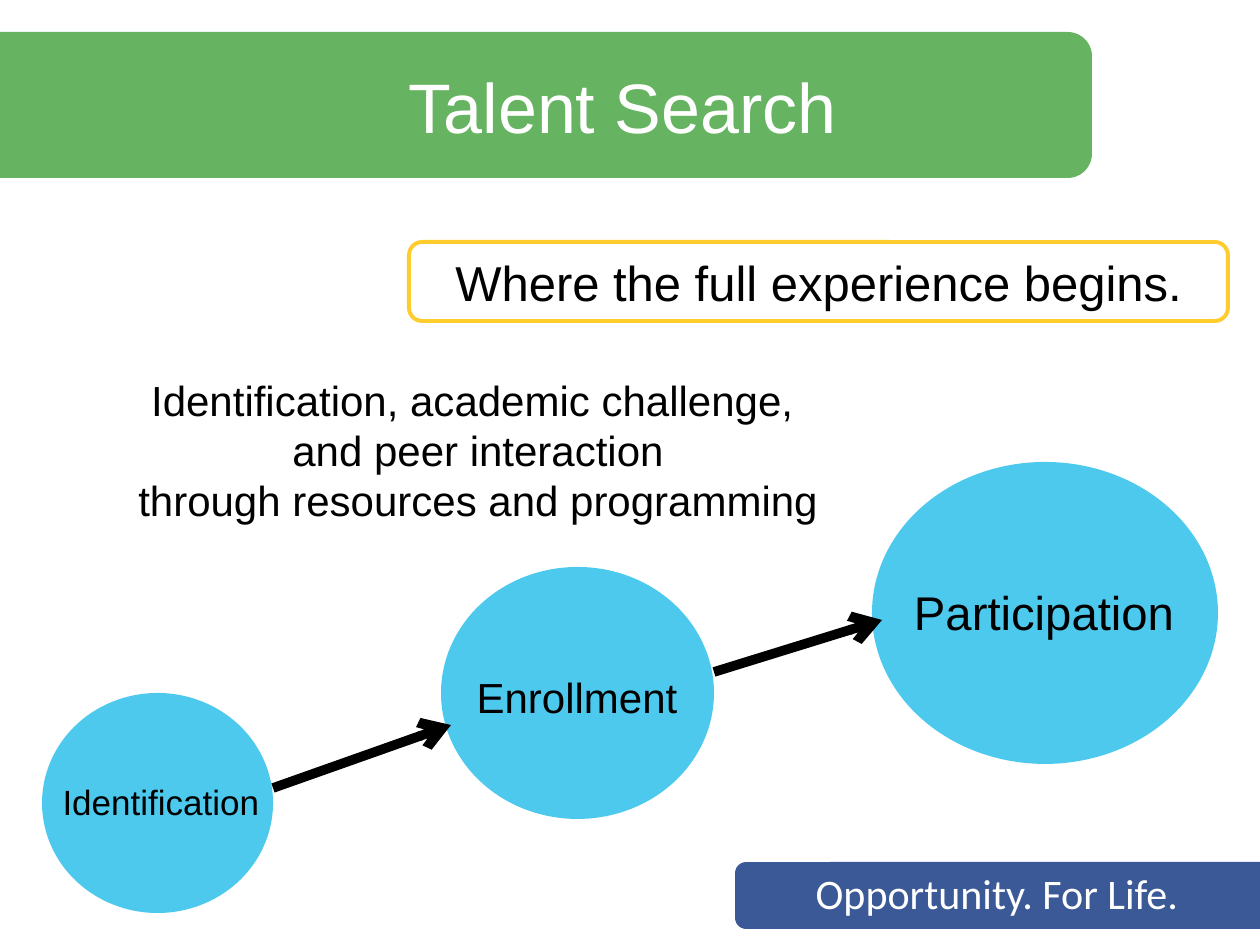
from dataclasses import dataclass

from lxml.etree import SubElement
from pptx import Presentation
from pptx.dml.color import RGBColor
from pptx.enum.shapes import MSO_CONNECTOR, MSO_SHAPE
from pptx.enum.text import MSO_ANCHOR, MSO_AUTO_SIZE, PP_ALIGN
from pptx.oxml.ns import qn
from pptx.util import Emu, Pt

EMU_PER_PX = 914400 / 126


def px(length):
    return Emu(round(length * EMU_PER_PX))


@dataclass(frozen=True)
class Theme:
    green: str = "66B361"
    navy: str = "3B5996"
    sky: str = "4DC9EE"
    yellow: str = "FFCC2E"
    white: str = "FFFFFF"
    black: str = "000000"
    font: str = "Arial"
    slogan_font: str = "Calibri"
    title: int = 40
    tagline: int = 28
    large: int = 27
    body: int = 24
    small: int = 20


def write_text(frame, text, *, size, color, font, anchor=MSO_ANCHOR.TOP, wrap=True):
    """Fill a frame with centred text: \\n parts paragraphs, \\v breaks a line."""
    frame.word_wrap = wrap
    frame.auto_size = MSO_AUTO_SIZE.NONE
    frame.vertical_anchor = anchor
    frame.text = text
    for paragraph in frame.paragraphs:
        paragraph.alignment = PP_ALIGN.CENTER
        paragraph.space_before = Pt(0)
        for run in paragraph.runs:
            run.font.size = Pt(size)
            run.font.name = font
            run.font.color.rgb = RGBColor.from_string(color)


class SlideBuilder:
    def __init__(self, slide, theme):
        self.slide = slide
        self.shapes = slide.shapes
        self.theme = theme

    def shape(self, kind, left, top, width, height, fill=None, line=None):
        shape = self.shapes.add_shape(kind, px(left), px(top), px(width), px(height))
        shape.shadow.inherit = False
        if fill:
            shape.fill.solid()
            shape.fill.fore_color.rgb = RGBColor.from_string(fill)
        else:
            shape.fill.background()
        if line:
            shape.line.color.rgb = RGBColor.from_string(line)
            shape.line.width = Pt(2.25)
        else:
            shape.line.fill.background()
        return shape

    def band(self, left, top, width, height, fill, rotation):
        """Draw an edge band: an upright tab turned on its side about its centre."""
        shift = (width - height) / 2
        shape = self.shape(MSO_SHAPE.ROUND_2_SAME_RECTANGLE, left + shift, top - shift,
                           height, width, fill)
        shape.rotation = rotation

    def text(self, text, left, top, width, height, size, color=None, font=None, **options):
        box = self.shapes.add_textbox(px(left), px(top), px(width), px(height))
        write_text(box.text_frame, text, size=size, color=color or self.theme.black,
                   font=font or self.theme.font, **options)

    def title(self, text, left, top, width, height):
        title = self.shapes.title
        title.left, title.top, title.width, title.height = map(px, (left, top, width, height))
        write_text(title.text_frame, text, size=self.theme.title,
                   color=self.theme.white, font=self.theme.font)
        # Bring the title in front of its band
        self.shapes._spTree.append(title._element)

    def framed_text(self, text, left, top, width, height):
        shape = self.shape(MSO_SHAPE.ROUNDED_RECTANGLE, left, top, width, height,
                           line=self.theme.yellow)
        write_text(shape.text_frame, text, size=self.theme.tagline, color=self.theme.black,
                   font=self.theme.font, anchor=MSO_ANCHOR.MIDDLE)

    def stage(self, text, circle, label, size):
        self.shape(MSO_SHAPE.FLOWCHART_CONNECTOR, *circle, fill=self.theme.sky)
        self.text(text, *label, size=size, wrap=False)

    def arrow(self, start, end):
        points = map(px, (*start, *end))
        connector = self.shapes.add_connector(MSO_CONNECTOR.STRAIGHT, *points)
        connector.line.color.rgb = RGBColor.from_string(self.theme.black)
        connector.line.width = Pt(5.5)
        SubElement(connector.line._get_or_add_ln(), qn("a:tailEnd"), type="arrow")
        SubElement(connector._element.spPr, qn("a:effectLst"))


def main():
    presentation = Presentation()
    presentation.slide_width, presentation.slide_height = px(1260), px(945)
    theme = Theme()
    slide = presentation.slides.add_slide(presentation.slide_layouts[5])
    builder = SlideBuilder(slide, theme)

    # Title band and slogan band
    builder.band(0, 32, 1092, 146, theme.green, rotation=90)
    builder.title("Talent Search", 155, 57, 935, 97)
    builder.band(735, 862, 525, 67, theme.navy, rotation=270)
    builder.text("Opportunity. For Life.", 795, 861, 404, 63, theme.body,
                 theme.white, theme.slogan_font, anchor=MSO_ANCHOR.MIDDLE)

    # Tagline and description
    builder.framed_text("Where the full experience begins.", 409, 242, 819, 79)
    builder.text("Identification, academic challenge, \n"
                 "and peer interaction\vthrough resources and programming",
                 -73, 368, 1102, 165, theme.body)

    # Growing stages: name, circle, label box, type size
    stages = [
        ("Identification", (42, 693, 231, 220), (40, 774, 242, 55), theme.small),
        ("Enrollment", (441, 567, 273, 252), (456, 665, 242, 63), theme.body),
        ("Participation", (872, 462, 346, 302), (897, 577, 294, 71), theme.large),
    ]
    for stage in stages:
        builder.stage(*stage)

    # Arrows between stages
    builder.arrow((273, 788), (451, 725))
    builder.arrow((714, 672), (882, 620))

    presentation.save("out.pptx")


if __name__ == "__main__":
    main()
